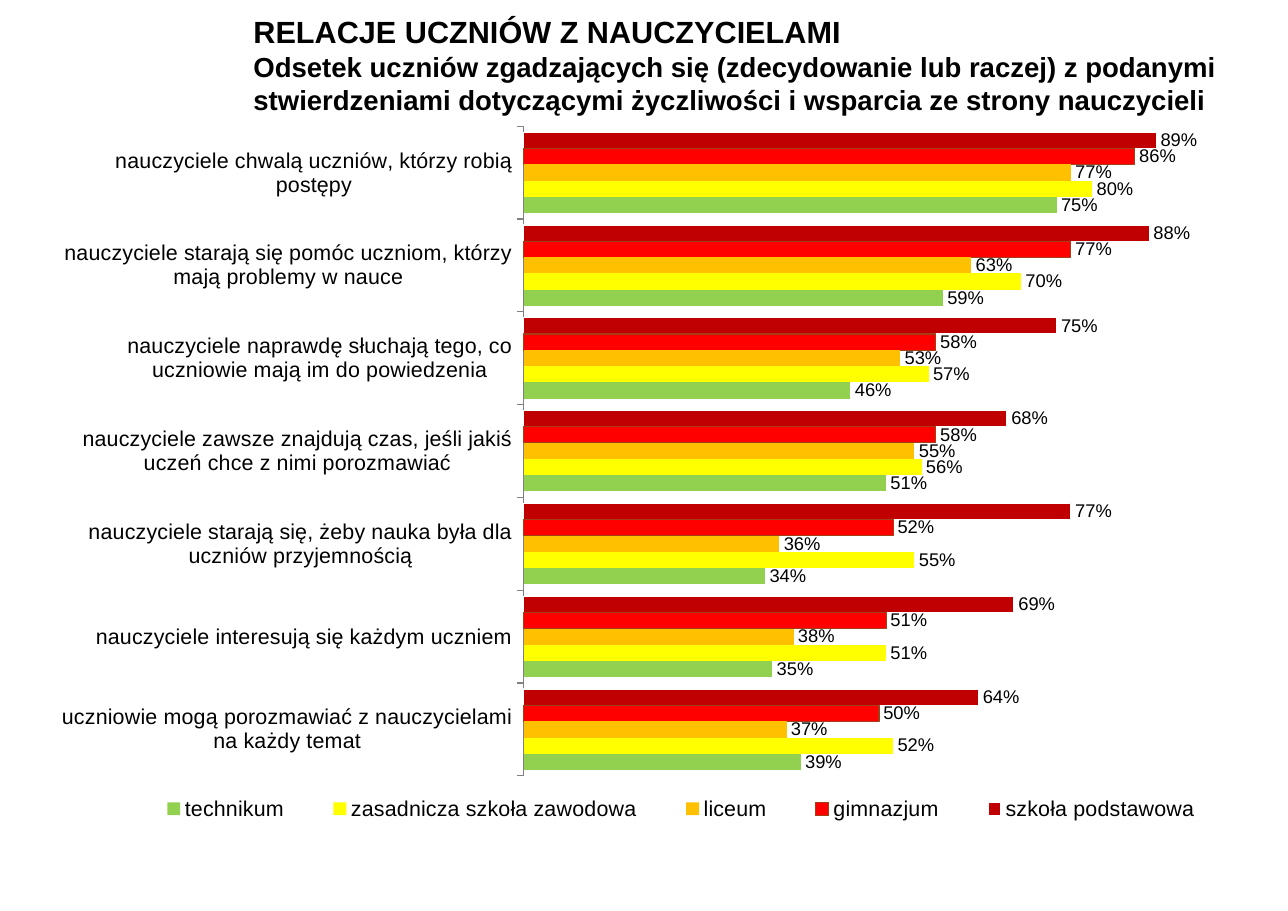
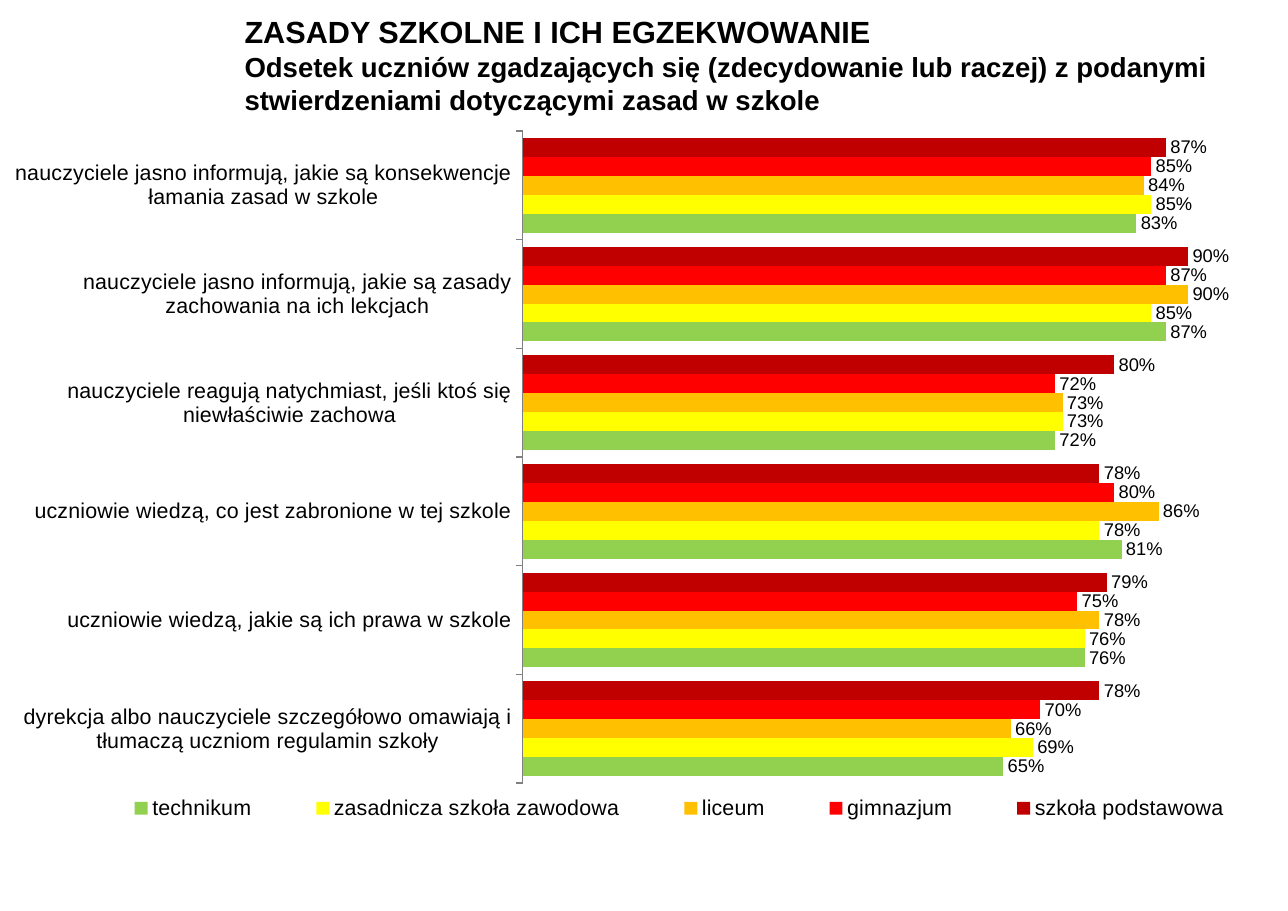
from copy import deepcopy
from dataclasses import dataclass, field

from lxml.etree import SubElement
from pptx import Presentation
from pptx.chart.chart import Chart
from pptx.chart.data import CategoryChartData
from pptx.dml.color import RGBColor
from pptx.enum.chart import XL_CHART_TYPE as ChartType
from pptx.enum.chart import XL_LABEL_POSITION as LabelPosition
from pptx.enum.chart import XL_LEGEND_POSITION as LegendPosition
from pptx.enum.chart import XL_TICK_MARK as TickMark
from pptx.enum.text import MSO_ANCHOR as Anchor
from pptx.enum.text import MSO_AUTO_SIZE as AutoSize
from pptx.enum.text import PP_ALIGN as Align
from pptx.oxml.ns import qn
from pptx.slide import Slide
from pptx.util import Pt


@dataclass(frozen=True)
class Theme:
    font: str = "Arial"
    text: RGBColor = RGBColor(0, 0, 0)
    axis: RGBColor = RGBColor(0x80, 0x80, 0x80)
    heading_size: int = 20
    subtitle_size: int = 18
    axis_size: int = 14
    label_size: int = 12
    base_size: int = 10
    percent: str = "#,##0%"


@dataclass(frozen=True)
class Frame:
    left: float
    top: float
    width: float
    height: float


@dataclass(frozen=True)
class School:
    name: str
    color: str


@dataclass(frozen=True)
class Statement:
    text: str
    percents: tuple[int, ...]


@dataclass(frozen=True)
class Topic:
    heading: str
    subtitle: str
    title_frame: Frame
    chart_frame: Frame
    plot_area: Frame
    statements: tuple[Statement, ...]
    outlines: dict[str, str] = field(default_factory=dict)


THEME = Theme()
PAGE_WIDTH, PAGE_HEIGHT = 841.68, 595.44
LEGEND_AREA = Frame(0.06, 0.93, 0.935, 0.06)
SCHOOLS = (
    School("szkoła podstawowa", "C00000"),
    School("gimnazjum", "FF0000"),
    School("liceum", "FFC000"),
    School("zasadnicza szkoła zawodowa", "FFFF00"),
    School("technikum", "92D050"),
)
QUESTION = "Odsetek uczniów zgadzających się (zdecydowanie lub raczej) z podanymi stwierdzeniami dotyczącymi "

TOPICS = (
    Topic(
        "RELACJE UCZNIÓW Z NAUCZYCIELAMI",
        QUESTION + "życzliwości i wsparcia ze strony nauczycieli",
        Frame(165.6, 8.6, 634.3, 52.6),
        Frame(35.3, 82.1, 776.9, 465.1),
        Frame(0.395, 0, 0.598, 0.914),
        (
            Statement("nauczyciele chwalą uczniów, którzy robią postępy", (89, 86, 77, 80, 75)),
            Statement("nauczyciele starają się pomóc uczniom, którzy mają problemy w nauce", (88, 77, 63, 70, 59)),
            Statement("nauczyciele naprawdę słuchają tego, co uczniowie mają im do powiedzenia", (75, 58, 53, 57, 46)),
            Statement("nauczyciele zawsze znajdują czas, jeśli jakiś uczeń chce z nimi porozmawiać", (68, 58, 55, 56, 51)),
            Statement("nauczyciele starają się, żeby nauka była dla uczniów przyjemnością", (77, 52, 36, 55, 34)),
            Statement("nauczyciele interesują się każdym uczniem", (69, 51, 38, 51, 35)),
            Statement("uczniowie mogą porozmawiać z nauczycielami na każdy temat", (64, 50, 37, 52, 39)),
        ),
        {"szkoła podstawowa": "FFFFFF", "gimnazjum": "A33E17"},
    ),
    Topic(
        "ZASADY SZKOLNE I ICH EGZEKWOWANIE",
        QUESTION + "zasad w szkole",
        Frame(159.8, 8.6, 640.1, 73.4),
        Frame(0, 76.3, PAGE_WIDTH, 470.9),
        Frame(0.406, 0.02, 0.574, 0.905),
        (
            Statement("nauczyciele jasno informują, jakie są konsekwencje łamania zasad w szkole", (87, 85, 84, 85, 83)),
            Statement("nauczyciele jasno informują, jakie są zasady zachowania na ich lekcjach", (90, 87, 90, 85, 87)),
            Statement("nauczyciele reagują natychmiast, jeśli ktoś się niewłaściwie zachowa", (80, 72, 73, 73, 72)),
            Statement("uczniowie wiedzą, co jest zabronione w tej szkole", (78, 80, 86, 78, 81)),
            Statement("uczniowie wiedzą, jakie są ich prawa w szkole", (79, 75, 78, 76, 76)),
            Statement("dyrekcja albo nauczyciele szczegółowo omawiają i tłumaczą uczniom regulamin szkoły", (78, 70, 66, 69, 65)),
        ),
    ),
)


def in_points(frame: Frame) -> tuple[Pt, Pt, Pt, Pt]:
    return Pt(frame.left), Pt(frame.top), Pt(frame.width), Pt(frame.height)


def style_font(font, size: float) -> None:
    font.name = THEME.font
    font.size = Pt(size)
    font.color.rgb = THEME.text


def write_title(page: Slide, topic: Topic) -> None:
    title = page.shapes.title
    title.left, title.top, title.width, title.height = in_points(topic.title_frame)
    box = title.text_frame
    box.margin_left = box.margin_top = box.margin_right = box.margin_bottom = 0
    box.word_wrap = True
    box.auto_size = AutoSize.NONE
    box.vertical_anchor = Anchor.TOP
    para = box.paragraphs[0]
    para.alignment = Align.LEFT
    lines = ((topic.heading, THEME.heading_size), (topic.subtitle, THEME.subtitle_size))
    for index, (text, size) in enumerate(lines):
        if index:
            para.add_line_break()
            para._p[-1].append(deepcopy(span._r.rPr))
        span = para.add_run()
        span.text = text
        style_font(span.font, size)
        span.font.bold = True


def make_layout(parent, area: Frame, inner: bool):
    for old in parent.findall(qn("c:layout")):
        parent.remove(old)
    layout = SubElement(parent, qn("c:layout"))
    manual = SubElement(layout, qn("c:manualLayout"))
    settings = {"layoutTarget": "inner"} if inner else {}
    settings |= {"xMode": "edge", "yMode": "edge"}
    settings |= {"x": area.left, "y": area.top, "w": area.width, "h": area.height}
    for name, value in settings.items():
        SubElement(manual, qn(f"c:{name}")).set("val", str(value))
    return layout


def style_series(chart: Chart, outlines: dict[str, str]) -> None:
    plot = chart.plots[0]
    plot.gap_width = 74
    plot.overlap = 0
    plot.vary_by_categories = False
    for series, school in zip(plot.series, SCHOOLS):
        series.invert_if_negative = False
        series.format.fill.solid()
        series.format.fill.fore_color.rgb = RGBColor.from_string(school.color)
        line = series.format.line
        if school.name in outlines:
            line.color.rgb = RGBColor.from_string(outlines[school.name])
            line.width = Pt(0.75)
        else:
            line.fill.background()
        labels = series.data_labels
        labels.show_value = True
        labels.number_format = THEME.percent
        labels.number_format_is_linked = False
        labels.position = LabelPosition.OUTSIDE_END
        style_font(labels.font, THEME.label_size)


def style_axes(chart: Chart) -> None:
    statements = chart.category_axis
    statements.reverse_order = True
    statements.has_major_gridlines = False
    statements.major_tick_mark = TickMark.OUTSIDE
    statements.minor_tick_mark = TickMark.NONE
    statements.format.line.color.rgb = THEME.axis
    statements.format.line.width = Pt(0.75)
    style_font(statements.tick_labels.font, THEME.axis_size)
    shares = chart.value_axis
    shares.minimum_scale = 0
    shares.maximum_scale = 1
    shares.has_major_gridlines = False
    shares.tick_labels.number_format = THEME.percent
    shares.tick_labels.number_format_is_linked = False
    shares.visible = False


def place_legend(chart: Chart) -> None:
    chart.has_legend = True
    legend = chart.legend
    legend.position = LegendPosition.BOTTOM
    legend.include_in_layout = False
    style_font(legend.font, THEME.axis_size)
    element = legend._element
    layout = make_layout(element, LEGEND_AREA, inner=False)
    element.find(qn("c:legendPos")).addnext(layout)


def draw_chart(page: Slide, topic: Topic) -> None:
    data = CategoryChartData(number_format=THEME.percent)
    data.categories = [statement.text for statement in topic.statements]
    for index, school in enumerate(SCHOOLS):
        data.add_series(school.name, [statement.percents[index] / 100 for statement in topic.statements])
    chart = page.shapes.add_chart(ChartType.BAR_CLUSTERED, *in_points(topic.chart_frame), data).chart
    chart.has_title = False
    style_font(chart.font, THEME.base_size)
    style_series(chart, topic.outlines)
    style_axes(chart)
    place_legend(chart)
    plot_area = chart._chartSpace.chart.plotArea
    plot_area.insert(0, make_layout(plot_area, topic.plot_area, inner=True))


def main() -> None:
    deck = Presentation()
    deck.slide_width, deck.slide_height = Pt(PAGE_WIDTH), Pt(PAGE_HEIGHT)
    title_only = deck.slide_layouts.get_by_name("Title Only")
    for topic in TOPICS:
        page = deck.slides.add_slide(title_only)
        write_title(page, topic)
        draw_chart(page, topic)
    deck.save("out.pptx")


if __name__ == "__main__":
    main()
